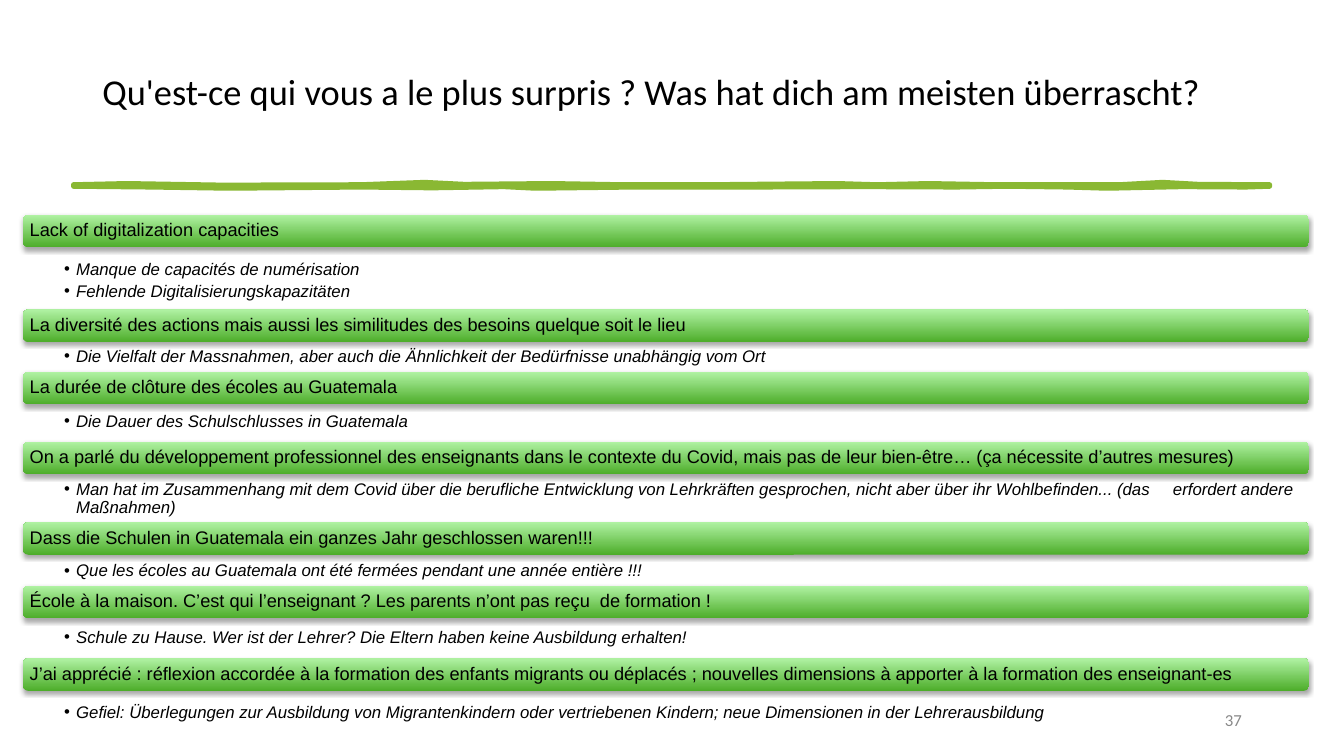
"""Build the bilingual slide listing the most surprising findings."""
from dataclasses import dataclass

from lxml.etree import SubElement
from pptx import Presentation
from pptx.dml.color import RGBColor
from pptx.enum.shapes import MSO_SHAPE
from pptx.enum.text import MSO_ANCHOR, MSO_AUTO_SIZE, PP_ALIGN
from pptx.oxml.ns import qn
from pptx.slide import Slide
from pptx.text.text import TextFrame, _Paragraph
from pptx.util import Cm, Pt

COLORS = {
    "text": "000000",
    "brush": "8AB833",
    "bar_bottom": "4DAD2A",
    "bar_top": "B0F2A3",
    "shadow": "000000",
    "number": "888888",
}
LEFT, WIDTH, BAR_HEIGHT = 0.58, 32.41, 0.82
BRUSH_TOP = [
    (1.85, 4.65), (3.2, 4.62), (5.6, 4.66), (9.1, 4.65), (10.7, 4.59),
    (11.7, 4.64), (13.9, 4.62), (15.7, 4.65), (17.8, 4.65), (21.1, 4.62),
    (22.1, 4.65), (23.4, 4.62), (25.1, 4.65), (28.2, 4.65), (29.3, 4.59),
    (30.2, 4.64), (32.0, 4.65),
]
BRUSH_BOTTOM = [
    (32.0, 4.7), (31.4, 4.72), (29.8, 4.71), (27.9, 4.75), (26.9, 4.72),
    (25.4, 4.7), (24.1, 4.72), (21.8, 4.71), (19.1, 4.72), (16.0, 4.72),
    (13.5, 4.75), (12.7, 4.71), (10.9, 4.74), (9.1, 4.72), (5.8, 4.75),
    (3.8, 4.72), (1.85, 4.7),
]


@dataclass
class Finding:
    """A heading bar and the translations listed under it."""

    bar_top: float
    heading: str
    list_top: float
    list_height: float
    translations: list[str]


FINDINGS = [
    Finding(5.41, "Lack of digitalization capacities", 6.53, 1.04,
            ["Manque de capacités de numérisation",
             "Fehlende Digitalisierungskapazitäten"]),
    Finding(7.8, "La diversité des actions mais aussi les similitudes des besoins "
            "quelque soit le lieu", 8.71, 0.61,
            ["Die Vielfalt der Massnahmen, aber auch die Ähnlichkeit der "
             "Bedürfnisse unabhängig vom Ort"]),
    Finding(9.37, "La durée de clôture des écoles au Guatemala", 10.36, 0.61,
            ["Die Dauer des Schulschlusses in Guatemala"]),
    Finding(11.13, "On a parlé du développement professionnel des enseignants dans le "
            "contexte du Covid, mais pas de leur bien-être… (ça nécessite d’autres "
            "mesures)", 12.07, 0.97,
            ["Man hat im Zusammenhang mit dem Covid über die berufliche Entwicklung "
             "von Lehrkräften gesprochen, nicht aber über ihr Wohlbefinden... (das "
             "\terfordert andere Maßnahmen)"]),
    Finding(13.16, "Dass die Schulen in Guatemala ein ganzes Jahr geschlossen waren!!!",
            14.12, 0.61,
            ["Que les écoles au Guatemala ont été fermées pendant une année entière !!!"]),
    Finding(14.76, "École à la maison. C’est qui l’enseignant ? Les parents n’ont pas "
            "reçu  de formation !", 15.8, 0.61,
            ["Schule zu Hause. Wer ist der Lehrer? Die Eltern haben keine Ausbildung "
             "erhalten!"]),
    Finding(16.59, "J’ai apprécié : réflexion accordée à la formation des enfants "
            "migrants ou déplacés ; nouvelles dimensions à apporter à la formation des "
            "enseignant-es", 17.68, 0.61,
            ["Gefiel: Überlegungen zur Ausbildung von Migrantenkindern oder "
             "vertriebenen Kindern; neue Dimensionen in der Lehrerausbildung"]),
]


def color(name: str) -> RGBColor:
    """Return a named colour."""
    return RGBColor.from_string(COLORS[name])


def set_frame(frame: TextFrame, margins: tuple[float, float, float, float],
              anchor: MSO_ANCHOR = MSO_ANCHOR.MIDDLE) -> None:
    """Set wrapping, anchor and left, top, right, bottom margins."""
    frame.word_wrap = True
    frame.auto_size = MSO_AUTO_SIZE.NONE
    frame.vertical_anchor = anchor
    (frame.margin_left, frame.margin_top,
     frame.margin_right, frame.margin_bottom) = map(Cm, margins)


def write(para: _Paragraph, text: str, size: float, font: str = "Arial",
          ink: str = "text", align: PP_ALIGN = PP_ALIGN.LEFT,
          italic: bool = False) -> None:
    """Fill and format a paragraph."""
    para.text = text
    para.alignment = align
    para.line_spacing = 0.9
    para.font.size = Pt(size)
    para.font.name = font
    para.font.italic = italic
    para.font.color.rgb = color(ink)


def add_bullet(para: _Paragraph) -> None:
    """Give a paragraph a hanging round bullet."""
    para.level = 1
    properties = para._p.get_or_add_pPr()
    properties.set("marL", str(Cm(0.3)))
    properties.set("indent", str(-Cm(0.3)))
    bullet_color = SubElement(properties, qn("a:buClr"))
    SubElement(bullet_color, qn("a:srgbClr"), val=COLORS["text"])
    SubElement(properties, qn("a:buFont"), typeface="Arial")
    SubElement(properties, qn("a:buChar"), char="•")


def add_title(page: Slide, text: str) -> None:
    """Place the slide title."""
    title = page.shapes.title
    title.left, title.top, title.width, title.height = map(Cm, (2.33, 1.02, 29.21, 3.68))
    set_frame(title.text_frame, (0.25, 0.13, 0.25, 1.13))
    write(title.text_frame.paragraphs[0], text, 26, font="Calibri")


def add_brush_stroke(page: Slide) -> None:
    """Draw the uneven rule under the title."""
    start, *points = [(Cm(x), Cm(y)) for x, y in BRUSH_TOP + BRUSH_BOTTOM]
    builder = page.shapes.build_freeform(*start)
    builder.add_line_segments(points, close=True)
    stroke = builder.convert_to_shape()
    stroke.fill.solid()
    stroke.fill.fore_color.rgb = color("brush")
    stroke.line.color.rgb = color("brush")
    stroke.line.width = Pt(3.25)
    SubElement(stroke.line._get_or_add_ln(), qn("a:round"))
    stroke.shadow.inherit = False


def add_bar(page: Slide, finding: Finding) -> None:
    """Draw a shaded heading bar."""
    bar = page.shapes.add_shape(MSO_SHAPE.ROUNDED_RECTANGLE, Cm(LEFT),
                                Cm(finding.bar_top), Cm(WIDTH), Cm(BAR_HEIGHT))
    bar.fill.gradient()
    bar.fill.gradient_angle = 90
    for stop, name in zip(bar.fill.gradient_stops, ("bar_bottom", "bar_top")):
        stop.color.rgb = color(name)
    bar.line.fill.background()
    bar.shadow.inherit = False
    effects = bar._element.spPr.find(qn("a:effectLst"))
    shadow = SubElement(effects, qn("a:outerShdw"), blurRad=str(Pt(3.1)),
                        dist=str(Pt(1.8)), dir="5400000", rotWithShape="0")
    tint = SubElement(shadow, qn("a:srgbClr"), val=COLORS["shadow"])
    SubElement(tint, qn("a:alpha"), val="35000")
    set_frame(bar.text_frame, (0.13, 0.13, 0.13, 0.13))
    write(bar.text_frame.paragraphs[0], finding.heading, 13)


def add_translations(page: Slide, finding: Finding) -> None:
    """Write the bulleted translations under a bar."""
    box = page.shapes.add_textbox(Cm(LEFT), Cm(finding.list_top),
                                  Cm(WIDTH), Cm(finding.list_height))
    frame = box.text_frame
    set_frame(frame, (1.04, 0.05, 0.23, 0.05), MSO_ANCHOR.TOP)
    for index, text in enumerate(finding.translations):
        para = frame.add_paragraph() if index else frame.paragraphs[0]
        add_bullet(para)
        write(para, text, 12, italic=True)
        para.space_after = Pt(2.4)


def add_page_number(page: Slide, number: str) -> None:
    """Write the page number at the lower right."""
    box = page.shapes.add_textbox(Cm(23.93), Cm(17.65), Cm(7.62), Cm(1.02))
    set_frame(box.text_frame, (0.25, 0.13, 0.25, 0.13))
    write(box.text_frame.paragraphs[0], number, 12, "Calibri", "number", PP_ALIGN.RIGHT)


def main() -> None:
    """Build and save the deck."""
    deck = Presentation()
    deck.slide_width, deck.slide_height = Cm(33.87), Cm(19.05)
    page = deck.slides.add_slide(deck.slide_layouts.get_by_name("Title Only"))
    add_title(page, "Qu'est-ce qui vous a le plus surpris ? "
                    "Was hat dich am meisten überrascht?")
    add_brush_stroke(page)
    for finding in FINDINGS:
        add_bar(page, finding)
        add_translations(page, finding)
    add_page_number(page, "37")
    deck.save("out.pptx")


if __name__ == "__main__":
    main()
